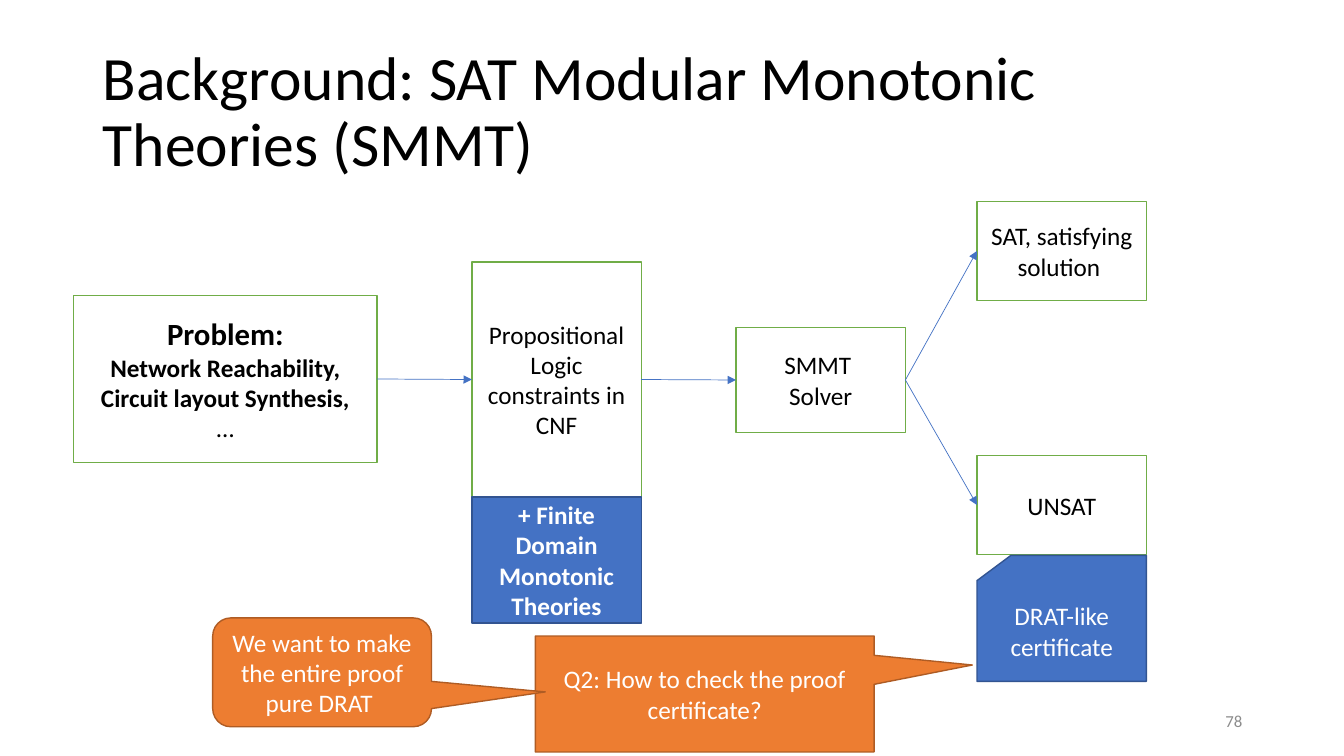
from lxml import etree
from pptx import Presentation
from pptx.dml.color import RGBColor
from pptx.enum.shapes import MSO_CONNECTOR, MSO_SHAPE
from pptx.enum.text import MSO_ANCHOR, PP_ALIGN
from pptx.oxml.ns import qn
from pptx.util import Pt

PX = 9144  # 100 px to the inch
RECT = MSO_SHAPE.RECTANGLE
CARD = MSO_SHAPE.FLOWCHART_CARD
CALL = MSO_SHAPE.RECTANGULAR_CALLOUT
ROUND = MSO_SHAPE.ROUNDED_RECTANGULAR_CALLOUT
STRAIGHT = MSO_CONNECTOR.STRAIGHT
MIDDLE = MSO_ANCHOR.MIDDLE
CENTER, RIGHT, LEFT = PP_ALIGN.CENTER, PP_ALIGN.RIGHT, PP_ALIGN.LEFT
LEFT_SIDE, RIGHT_SIDE = 1, 3

WHITE, BLACK, GREEN, BLUE = "FFFFFF", "000000", "70AD47", "4472C4"
NAVY, ORANGE, RUST, GRAY = "325491", "ED7D31", "AF5C24", "8C8C8C"


def paint(target, color):
    """Set a fill, line fill or font to a solid hex colour."""
    if hasattr(target, "solid"):
        target.solid()
        target = target.fore_color
    else:
        target = target.color
    target.rgb = RGBColor.from_string(color)


def write(shape, text, size, color, align, bold=False):
    frame = shape.text_frame
    frame.text = text
    frame.word_wrap = True
    frame.vertical_anchor = MIDDLE
    for para in frame.paragraphs:
        para.alignment = align
        for run in para.runs:
            run.font.name = "Calibri"
            run.font.size = Pt(size)
            run.font.bold = bold
            paint(run.font, color)


prs = Presentation()
prs.slide_width, prs.slide_height = 1333 * PX, 750 * PX
slide = prs.slides.add_slide(prs.slide_layouts[5])
shapes = slide.shapes

title = shapes.title
title.left, title.top, title.width, title.height = [n * PX for n in (92, 40, 1150, 145)]
write(title, "Background: SAT Modular Monotonic Theories (SMMT)", 44, BLACK, LEFT)
title.text_frame.paragraphs[0].line_spacing = 0.9

# name: kind, place, fill, line, text colour, bold, text
boxes = {
    "problem": (RECT, (73, 293, 301, 166), WHITE, GREEN, BLACK, True,
                "Problem:\nNetwork Reachability,\nCircuit layout Synthesis,\n…"),
    "logic": (RECT, (468, 260, 168, 233), WHITE, GREEN, BLACK, False,
              "Propositional Logic constraints in CNF"),
    "sat": (RECT, (969, 200, 168, 98), WHITE, GREEN, BLACK, False,
            "SAT, satisfying solution "),
    "solver": (RECT, (730, 325, 168, 104), WHITE, GREEN, BLACK, False,
               "SMMT \nSolver"),
    "unsat": (RECT, (969, 452, 168, 98), WHITE, GREEN, BLACK, False, "UNSAT"),
    "theory": (RECT, (468, 493, 168, 125), BLUE, NAVY, WHITE, True,
               "+ Finite Domain Monotonic Theories"),
    "proof": (CARD, (969, 551, 168, 125), BLUE, NAVY, WHITE, False,
              "DRAT-like certificate"),
    "query": (CALL, (531, 631, 336, 115), ORANGE, RUST, WHITE, False,
              "Q2: How to check the proof certificate?"),
    "goal": (ROUND, (211, 613, 217, 108), ORANGE, RUST, WHITE, False,
             "We want to make the entire proof pure DRAT "),
}
made = {}
for name, (kind, place, fill, line, color, bold, text) in boxes.items():
    box = shapes.add_shape(kind, *[n * PX for n in place])
    box.shadow.inherit = False
    paint(box.fill, fill)
    paint(box.line.fill, line)
    box.line.width = Pt(1)
    write(box, text, 18, color, CENTER, bold)
    made[name] = box

lines = made["problem"].text_frame.paragraphs
lines[0].runs[0].font.size = Pt(22)
lines[-1].runs[0].font.bold = False

tips = {"query": (0.79, -0.25), "goal": (1.02, 0.18)}
for name, tip in tips.items():
    for i, value in enumerate(tip):
        made[name].adjustments[i] = value

links = [("problem", "logic"), ("logic", "solver"), ("solver", "sat"), ("solver", "unsat")]
for start, end in links:
    arrow = shapes.add_connector(STRAIGHT, 0, 0, 0, 0)
    arrow.begin_connect(made[start], RIGHT_SIDE)
    arrow.end_connect(made[end], LEFT_SIDE)
    paint(arrow.line.fill, BLUE)
    arrow.line.width = Pt(0.5)
    props = arrow._element.spPr
    etree.SubElement(props.find(qn("a:ln")), qn("a:tailEnd"), type="triangle")
    etree.SubElement(props, qn("a:effectLst"))

number = shapes.add_textbox(*[n * PX for n in (942, 695, 300, 40)])
write(number, "78", 12, GRAY, RIGHT)

prs.save("out.pptx")
